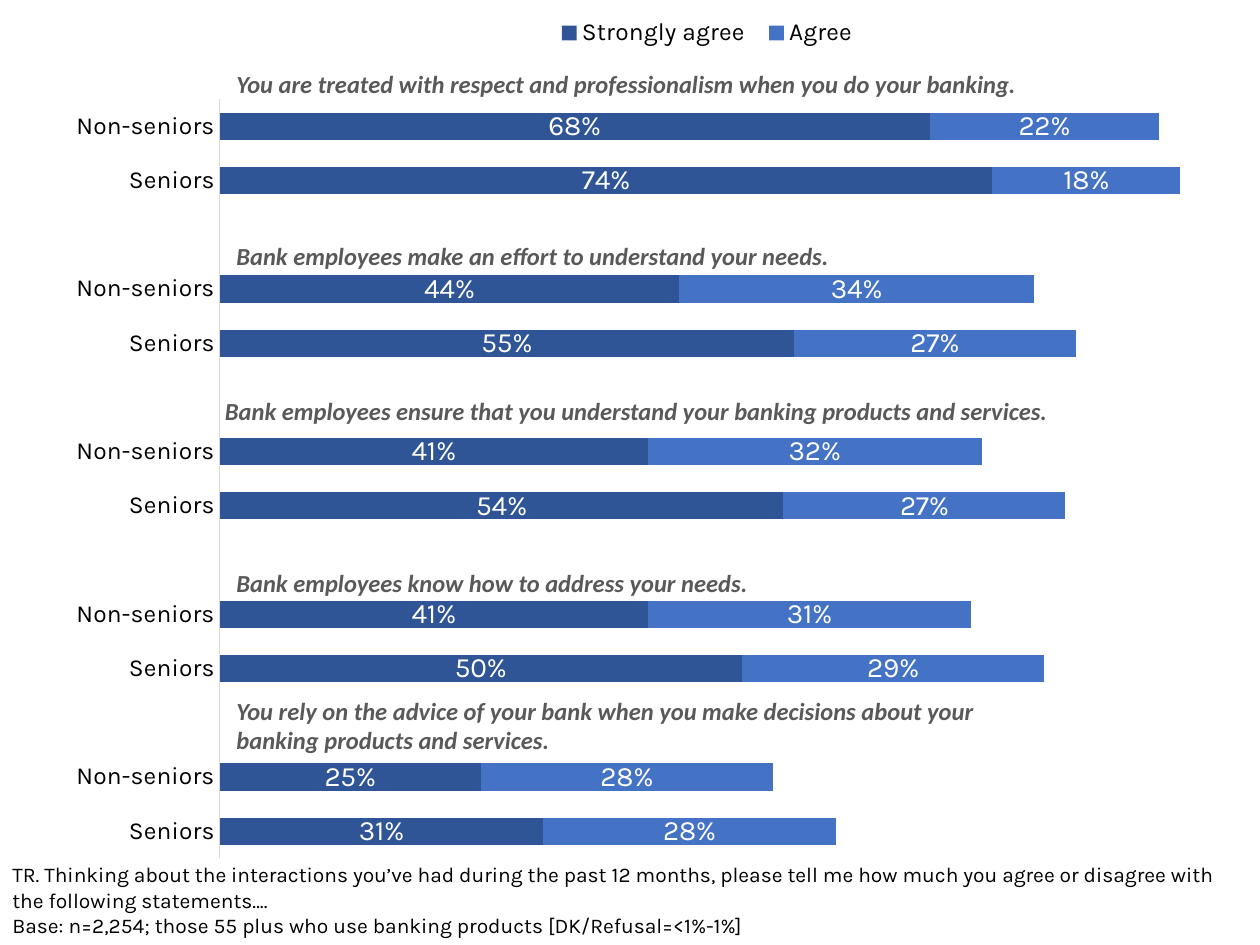
from lxml import etree
from pptx import Presentation
from pptx.chart.data import CategoryChartData
from pptx.dml.color import RGBColor
from pptx.enum.chart import (XL_CHART_TYPE, XL_LABEL_POSITION,
                             XL_LEGEND_POSITION, XL_TICK_MARK)
from pptx.enum.text import MSO_AUTO_SIZE
from pptx.oxml.ns import qn
from pptx.util import Pt

STACKED = XL_CHART_TYPE.BAR_STACKED
CENTER = XL_LABEL_POSITION.CENTER
TOP = XL_LEGEND_POSITION.TOP
NO_TICK = XL_TICK_MARK.NONE
GROW = MSO_AUTO_SIZE.SHAPE_TO_FIT_TEXT

BLACK, GRAY, WHITE = "000000", "595959", "FFFFFC"

# One row per statement: text, box, (non-seniors, seniors) for each series
ITEMS = [
    ("You are treated with respect and professionalism when you do your banking.",
     (128, 36, 553, 24.5), (0.68, 0.74), (0.22, 0.18)),
    ("Bank employees make an effort to understand your needs.",
     (128, 134, 509, 24.5), (0.44, 0.55), (0.34, 0.27)),
    ("Bank employees ensure that you understand your banking products and services.",
     (121.5, 223, 509, 24.5), (0.41, 0.54), (0.32, 0.27)),
    ("Bank employees know how to address your needs.",
     (128, 321, 487.5, 24.5), (0.41, 0.5), (0.31, 0.29)),
    ("You rely on the advice of your bank when you make decisions about your "
     "banking products and services.",
     (128, 394, 458.5, 41), (0.25, 0.31), (0.28, 0.28)),
]
NOTE = ("TR. Thinking about the interactions you’ve had during the past 12 months, "
        "please tell me how much you agree or disagree with the following statements….\v"
        "Base: n=2,254; those 55 plus who use banking products [DK/Refusal=<1%-1%]")


def color(code):
    return RGBColor.from_string(code)


def style(font, size, code, name="Karla"):
    font.size, font.name = Pt(size), name
    font.color.rgb = color(code)


def spread(pairs, gap):
    """Join the pairs into one list with a gap row between them."""
    rows = []
    for pair in pairs:
        rows += [*pair, gap]
    return rows[:-1]


def place(part, spot, x, y, w, h, inner=False):
    """Give a chart part a fixed layout, as fractions of the chart."""
    for old in part.findall(qn("c:layout")):
        part.remove(old)
    layout = etree.Element(qn("c:layout"))
    manual = etree.SubElement(layout, qn("c:manualLayout"))
    pairs = [("layoutTarget", "inner")] if inner else []
    pairs += [("xMode", "edge"), ("yMode", "edge"),
              ("x", x), ("y", y), ("w", w), ("h", h)]
    for tag, val in pairs:
        etree.SubElement(manual, qn("c:" + tag)).set("val", str(val))
    part.insert(spot, layout)


def add_text(slide, box, text, size, code, name="Karla", strong=False):
    frame = slide.shapes.add_textbox(*map(Pt, box)).text_frame
    frame.word_wrap = True
    frame.auto_size = GROW
    para = frame.paragraphs[0]
    para.text = text
    style(para.font, size, code, name)
    if strong:
        para.font.bold = para.font.italic = True


def add_bars(slide, box):
    data = CategoryChartData(number_format="0%")
    data.categories = spread([("Non-seniors", "Seniors")] * len(ITEMS), "")
    data.add_series("Strongly agree", spread([item[2] for item in ITEMS], None))
    data.add_series("Agree", spread([item[3] for item in ITEMS], None))
    chart = slide.shapes.add_chart(STACKED, *map(Pt, box), data).chart
    chart.has_title = False
    style(chart.font, 10, BLACK)

    # Bars and their labels
    plot = chart.plots[0]
    plot.gap_width = plot.overlap = 100
    plot.vary_by_categories = False
    for series, code in zip(plot.series, ("2F5597", "4472C4")):
        series.format.fill.solid()
        series.format.fill.fore_color.rgb = color(code)
        labels = series.data_labels
        labels.show_value = True
        labels.position = CENTER
        labels.number_format = "0%"
        labels.number_format_is_linked = False
        style(labels.font, 16, WHITE)

    # Axes
    cat = chart.category_axis
    cat.reverse_order = True
    cat.major_tick_mark = cat.minor_tick_mark = NO_TICK
    cat.format.line.color.rgb = color("D9D9D9")
    cat.format.line.width = Pt(0.75)
    style(cat.tick_labels.font, 14, BLACK)
    val = chart.value_axis
    val.minimum_scale, val.maximum_scale = 0, 1
    val.has_major_gridlines = False
    val.visible = False

    # Legend and plot area
    chart.has_legend = True
    legend = chart.legend
    legend.position = TOP
    legend.include_in_layout = False
    style(legend.font, 14, BLACK)
    root = chart.element
    place(root.find(".//" + qn("c:legend")), 1, 0.41, 0, 0.26, 0.05)
    place(root.find(".//" + qn("c:plotArea")), 0, 0.147, 0.101, 0.842, 0.872, True)


def main():
    deck = Presentation()
    deck.slide_width, deck.slide_height = Pt(720), Pt(540)
    slide = deck.slides.add_slide(deck.slide_layouts[6])
    add_text(slide, (0, 489, 720, 51), NOTE, 12, BLACK)
    add_bars(slide, (21.5, 6.5, 708.5, 497.5))
    for text, box, *_ in ITEMS:
        add_text(slide, box, text, 14, GRAY, "Calibri", strong=True)
    deck.save("out.pptx")


if __name__ == "__main__":
    main()
